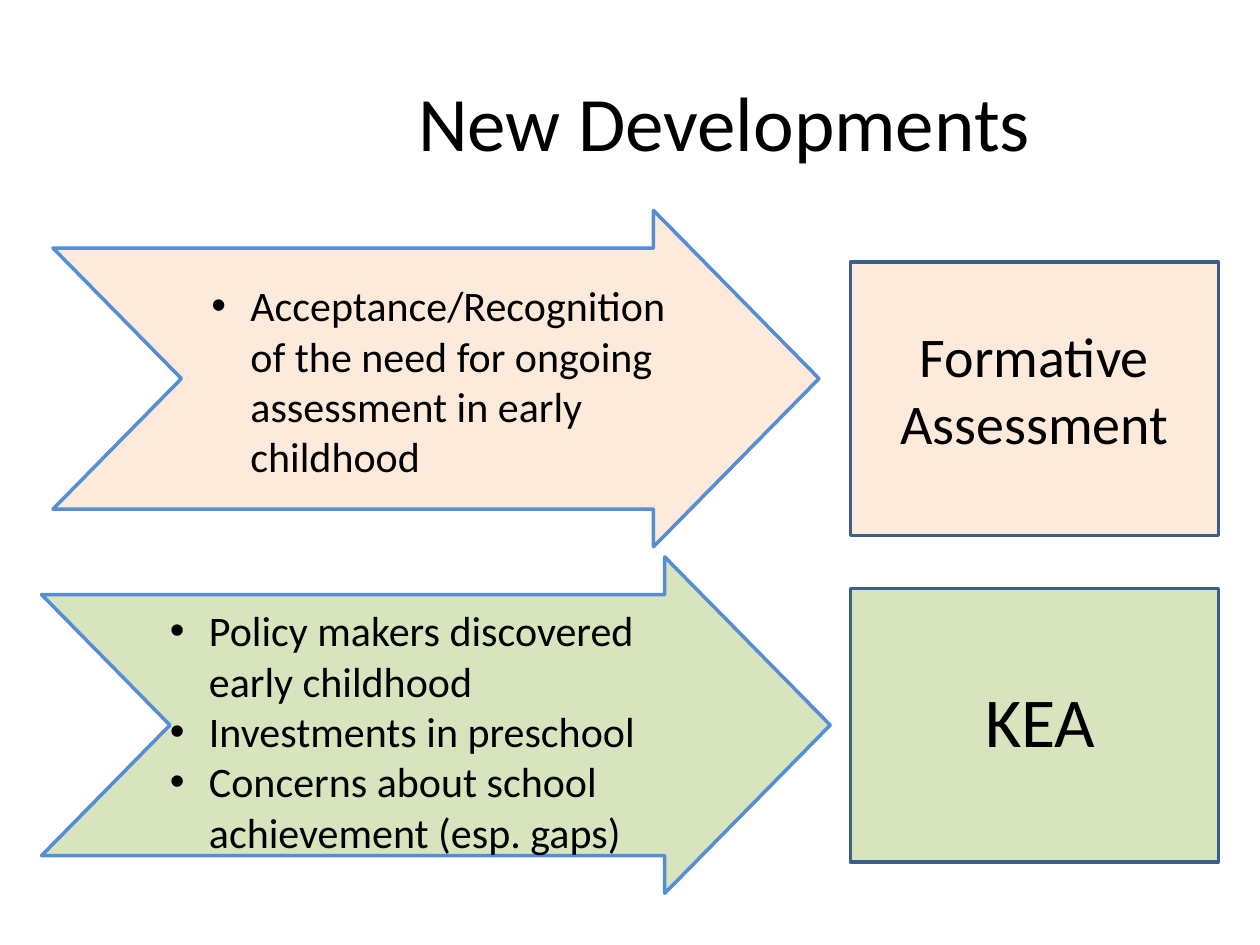
from lxml.etree import SubElement
from pptx import Presentation
from pptx.dml.color import RGBColor
from pptx.enum.shapes import MSO_SHAPE
from pptx.enum.text import MSO_ANCHOR, PP_ALIGN
from pptx.oxml.ns import qn
from pptx.util import Inches, Pt

BLACK = RGBColor(0x00, 0x00, 0x00)
PEACH = RGBColor(0xFD, 0xEA, 0xDA)
GREEN = RGBColor(0xD7, 0xE4, 0xBD)
ARROW_BLUE = RGBColor(0x55, 0x8E, 0xD5)
BOX_BLUE = RGBColor(0x3A, 0x5F, 0x8C)

TITLE = "New Developments"
ROWS = [
    {
        "fill": PEACH,
        "reasons": ["Acceptance/Recognition of the need for ongoing assessment in early childhood"],
        "result": "Formative Assessment",
        "result_size": 32,
        "arrow_left": 0.42,
        "reasons_area": (1.58, 0.5, 3.9, 1.72),
        "result_area": (6.92, 0.83, 2.58, 1.18),
    },
    {
        "fill": GREEN,
        "reasons": [
            "Policy makers discovered early childhood",
            "Investments in preschool",
            "Concerns about school achievement (esp. gaps)",
        ],
        "result": "KEA",
        "result_size": 40,
        "arrow_left": 0.33,
        "reasons_area": (1.25, 0.33, 4.25, 2.42),
        "result_area": (7.17, 0.91, 2.17, 0.77),
    },
]

SLIDE_WIDTH, SLIDE_HEIGHT = 10, 7.5
ARROW_CENTER = 3.46
ARROW_HEIGHT = 2.67
FIRST_ARROW_TOP, ARROW_PITCH = 1.67, 2.75
FIRST_BOX_TOP, BOX_PITCH = 2.08, 2.59
BOX_LEFT, BOX_WIDTH, BOX_HEIGHT = 6.75, 2.92, 2.17
INDENT = 0.31


def write(frame, lines, size, align=PP_ALIGN.LEFT, bullet=False, anchor=MSO_ANCHOR.TOP):
    frame.word_wrap = True
    frame.vertical_anchor = anchor
    for index, line in enumerate(lines):
        para = frame.paragraphs[0] if index == 0 else frame.add_paragraph()
        para.alignment = align
        if bullet:
            properties = para._p.get_or_add_pPr()
            properties.set("marL", str(Inches(INDENT)))
            properties.set("indent", str(Inches(-INDENT)))
            SubElement(properties, qn("a:buFont"), typeface="Arial")
            SubElement(properties, qn("a:buChar"), char="•")
        span = para.add_run()
        span.text = line
        span.font.name = "Calibri"
        span.font.size = Pt(size)
        span.font.color.rgb = BLACK


def add_panel(page, preset, area, fill, line):
    panel = page.shapes.add_shape(preset, *map(Inches, area))
    panel.shadow.inherit = False
    panel.fill.solid()
    panel.fill.fore_color.rgb = fill
    panel.line.color.rgb = line
    panel.line.width = Pt(2)
    return panel


def add_text(page, area, lines, **style):
    box = page.shapes.add_textbox(*map(Inches, area))
    write(box.text_frame, lines, **style)


def add_row(page, index, row):
    arrow_top = FIRST_ARROW_TOP + index * ARROW_PITCH
    arrow_width = 2 * (ARROW_CENTER - row["arrow_left"])
    arrow = add_panel(
        page,
        MSO_SHAPE.NOTCHED_RIGHT_ARROW,
        (row["arrow_left"], arrow_top, arrow_width, ARROW_HEIGHT),
        row["fill"],
        ARROW_BLUE,
    )
    arrow.adjustments[0] = 0.776
    arrow.adjustments[1] = 0.492
    box_top = FIRST_BOX_TOP + index * BOX_PITCH
    box_area = (BOX_LEFT, box_top, BOX_WIDTH, BOX_HEIGHT)
    add_panel(page, MSO_SHAPE.RECTANGLE, box_area, row["fill"], BOX_BLUE)

    for key, lines, style in (
        ("reasons_area", row["reasons"], {"size": 24, "bullet": True}),
        ("result_area", [row["result"]], {"size": row["result_size"], "align": PP_ALIGN.CENTER}),
    ):
        left, offset, width, height = row[key]
        add_text(page, (left, arrow_top + offset, width, height), lines, **style)


def main():
    deck = Presentation()
    deck.slide_width = Inches(SLIDE_WIDTH)
    deck.slide_height = Inches(SLIDE_HEIGHT)
    page = deck.slides.add_slide(deck.slide_layouts[5])
    title = page.shapes.title
    title.left, title.top, title.width, title.height = map(Inches, (1.25, 0.33, 9, 1.25))
    write(title.text_frame, [TITLE], 44, align=PP_ALIGN.CENTER, anchor=MSO_ANCHOR.MIDDLE)
    for index, row in enumerate(ROWS):
        add_row(page, index, row)
    deck.save("out.pptx")


if __name__ == "__main__":
    main()
